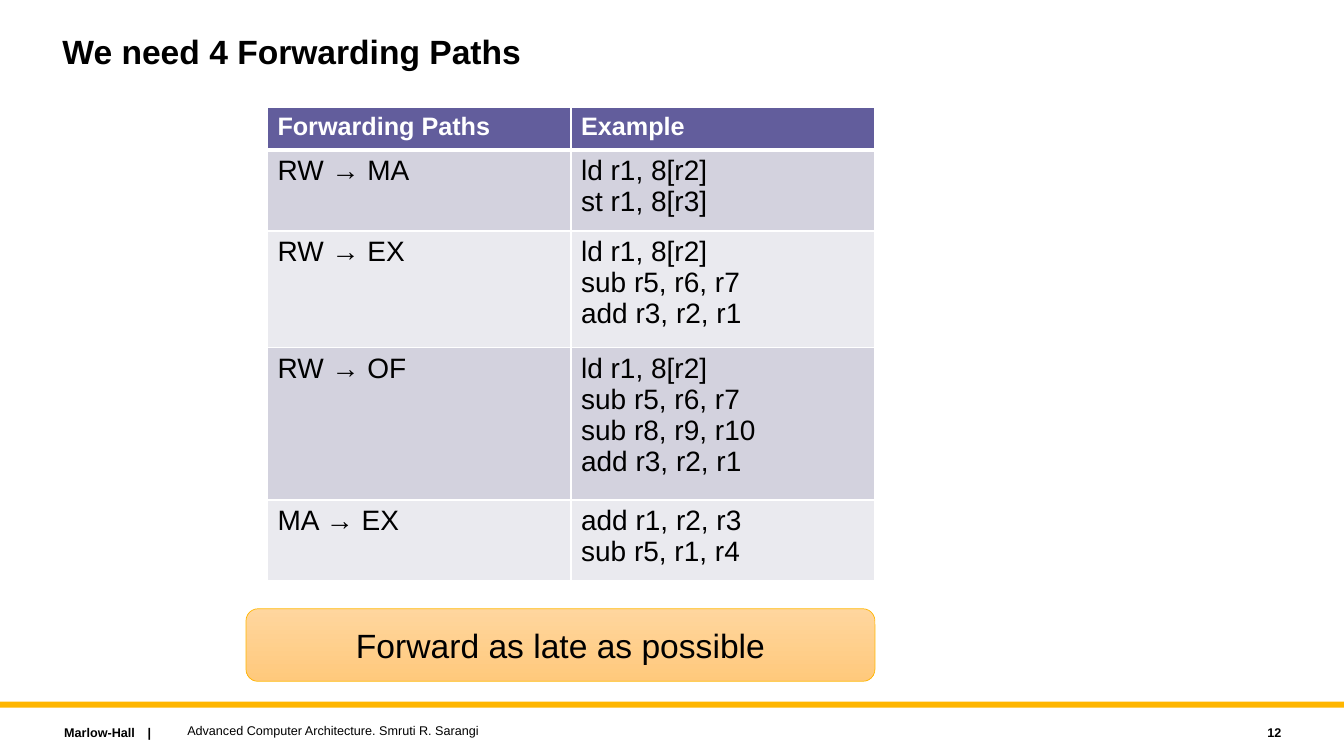
from lxml import etree
from pptx import Presentation
from pptx import util as u
from pptx.dml.color import RGBColor
from pptx.enum import shapes, text
from pptx.oxml import ns

FONT = "Arial"
BLACK = RGBColor(0x00, 0x00, 0x00)
WHITE = RGBColor(0xFF, 0xFF, 0xFF)
GOLD = RGBColor(0xFF, 0xB6, 0x00)
PURPLE = RGBColor(0x62, 0x5D, 0x9C)
BAND_DARK = RGBColor(0xD3, 0xD2, 0xDE)
BAND_LIGHT = RGBColor(0xEA, 0xEA, 0xEF)
PEACH_TOP = RGBColor(0xFF, 0xD6, 0x9E)
PEACH_BOTTOM = RGBColor(0xFF, 0xC9, 0x7C)

HEADINGS = ("Forwarding Paths", "Example")
FORWARDING_PATHS = (
    ("RW → MA", ("ld r1, 8[r2]", "st r1, 8[r3]")),
    ("RW → EX", ("ld r1, 8[r2]", "sub r5, r6, r7", "add r3, r2, r1")),
    ("RW → OF", ("ld r1, 8[r2]", "sub r5, r6, r7", "sub r8, r9, r10", "add r3, r2, r1")),
    ("MA → EX", ("add r1, r2, r3", "sub r5, r1, r4")),
)


def box(left, top, width, height):
    return u.Cm(left), u.Cm(top), u.Cm(width), u.Cm(height)


def add_run(paragraph, words, size, color=BLACK, bold=False):
    run = paragraph.add_run()
    run.text = words
    run.font.name = FONT
    run.font.size = u.Pt(size)
    run.font.bold = bold
    run.font.color.rgb = color


def set_title(slide, words):
    title = slide.shapes.title
    title.left, title.top, title.width, title.height = box(1.32, 0.76, 25.4, 2.29)
    frame = title.text_frame
    frame.auto_size = text.MSO_AUTO_SIZE.NONE
    frame.vertical_anchor = text.MSO_ANCHOR.TOP
    paragraph = frame.paragraphs[0]
    paragraph.alignment = text.PP_ALIGN.LEFT
    paragraph.line_spacing = 0.9
    add_run(paragraph, words, 24, bold=True)


def add_footer(slide, position, words, bold=False, align=text.PP_ALIGN.LEFT, tab=None):
    frame = slide.shapes.add_textbox(*position).text_frame
    frame.word_wrap = True
    frame.vertical_anchor = text.MSO_ANCHOR.MIDDLE
    paragraph = frame.paragraphs[0]
    paragraph.alignment = align
    if tab is not None:
        properties = paragraph._p.get_or_add_pPr()
        tabs = etree.SubElement(properties, ns.qn("a:tabLst"))
        etree.SubElement(tabs, ns.qn("a:tab"), pos=str(u.Cm(tab)), algn="l")
    add_run(paragraph, words, 9, bold=bold)


def add_plain_shape(slide, kind, position):
    shape = slide.shapes.add_shape(kind, *position)
    shape.shadow.inherit = False
    return shape


def add_rule(slide, position):
    rule = add_plain_shape(slide, shapes.MSO_SHAPE.RECTANGLE, position)
    rule.fill.solid()
    rule.fill.fore_color.rgb = GOLD
    rule.line.fill.background()


def add_callout(slide, position, words):
    callout = add_plain_shape(slide, shapes.MSO_SHAPE.ROUNDED_RECTANGLE, position)
    callout.fill.gradient()
    callout.fill.gradient_angle = 270
    for stop, place, color in zip(callout.fill.gradient_stops, (0, 1), (PEACH_TOP, PEACH_BOTTOM)):
        stop.position = place
        stop.color.rgb = color
    callout.line.color.rgb = GOLD
    callout.line.width = u.Pt(0.5)
    frame = callout.text_frame
    frame.vertical_anchor = text.MSO_ANCHOR.MIDDLE
    frame.paragraphs[0].alignment = text.PP_ALIGN.CENTER
    add_run(frame.paragraphs[0], words, 24)


def set_borders(cell, widths):
    properties = cell._tc.get_or_add_tcPr()
    for side, width in zip("LRTB", widths):
        line = etree.SubElement(properties, ns.qn("a:ln" + side), w=str(u.Pt(width)))
        fill = etree.SubElement(line, ns.qn("a:solidFill"))
        etree.SubElement(fill, ns.qn("a:srgbClr"), val=str(WHITE))


def fill_cell(cell, lines, fill, size, color=BLACK, bold=False, widths=(1, 1, 1, 1)):
    set_borders(cell, widths)
    cell.fill.solid()
    cell.fill.fore_color.rgb = fill
    frame = cell.text_frame
    for index, line in enumerate(lines):
        paragraph = frame.add_paragraph() if index else frame.paragraphs[0]
        add_run(paragraph, line, size, color, bold)


def add_paths_table(slide, position):
    row_count = len(FORWARDING_PATHS) + 1
    table = slide.shapes.add_table(row_count, len(HEADINGS), *position).table
    table.rows[0].height = u.Cm(1.08)
    for column, heading in enumerate(HEADINGS):
        fill_cell(table.cell(0, column), [heading], PURPLE, 18, WHITE, True, (1, 1, 1, 3))
    for row, (route, code) in enumerate(FORWARDING_PATHS, start=1):
        table.rows[row].height = u.Cm(0.24 + 0.9 * len(code))
        band = BAND_DARK if row % 2 else BAND_LIGHT
        top = 3 if row == 1 else 1
        for column, lines in enumerate(([route], code)):
            fill_cell(table.cell(row, column), lines, band, 20, widths=(1, 1, top, 1))


def main():
    presentation = Presentation()
    presentation.slide_width = u.Cm(33.87)
    presentation.slide_height = u.Cm(19.05)
    slide = presentation.slides.add_slide(presentation.slide_layouts[5])
    add_rule(slide, box(0, 17.68, 33.87, 0.15))
    add_footer(slide, box(1.37, 18.14, 5.77, 0.64), "Marlow-Hall\t|", bold=True, tab=2.1)
    set_title(slide, "We need 4 Forwarding Paths")
    add_footer(slide, box(4.47, 18.08, 20.32, 0.64), "Advanced Computer Architecture. Smruti R. Sarangi")
    add_footer(slide, box(28.98, 18.14, 3.56, 0.64), "12", bold=True, align=text.PP_ALIGN.RIGHT)
    add_paths_table(slide, box(6.74, 2.7, 15.3, 11.94))
    add_callout(slide, box(6.2, 15.34, 15.85, 1.83), "Forward as late as possible")
    presentation.save("out.pptx")


if __name__ == "__main__":
    main()
